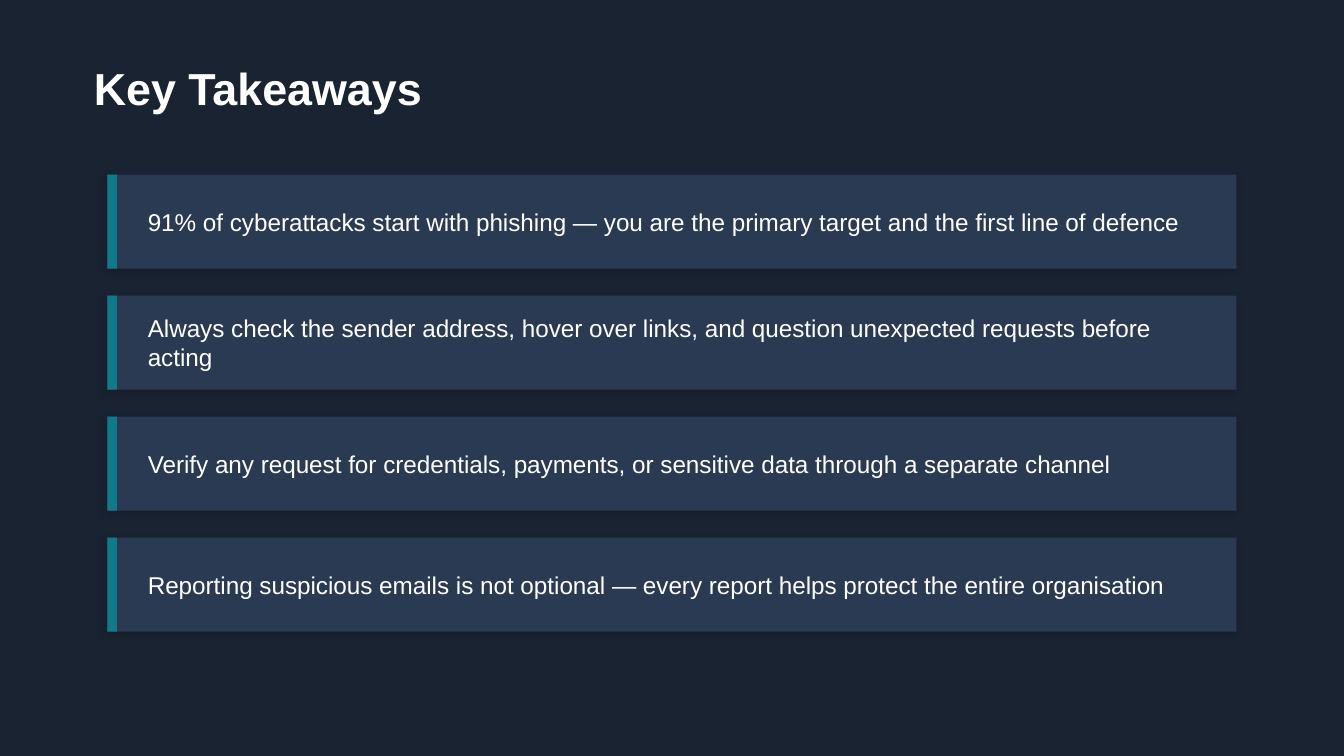
from lxml import etree
from pptx import Presentation
from pptx.dml.color import RGBColor
from pptx.enum import shapes, text
from pptx.oxml import ns
from pptx.util import Inches, Pt

NAVY = RGBColor(0x1A, 0x23, 0x32)
SLATE = RGBColor(0x2A, 0x3A, 0x52)
TEAL = RGBColor(0x0F, 0x7B, 0x8A)
WHITE = RGBColor(0xFF, 0xFF, 0xFF)

POINTS = [
    "91% of cyberattacks start with phishing — you are the primary target and the first line of defence",
    "Always check the sender address, hover over links, and question unexpected requests before acting",
    "Verify any request for credentials, payments, or sensitive data through a separate channel",
    "Reporting suspicious emails is not optional — every report helps protect the entire organisation",
]


def add_text(slide, words, box, size=13, bold=False, inset=None):
    frame = slide.shapes.add_textbox(*map(Inches, box)).text_frame
    frame.word_wrap = True
    frame.vertical_anchor = text.MSO_ANCHOR.MIDDLE
    if inset is not None:
        frame.margin_left = frame.margin_right = Inches(inset)
        frame.margin_top = frame.margin_bottom = Inches(inset)
    run = frame.paragraphs[0].add_run()
    run.text = words
    run.font.name = "Arial"
    run.font.size = Pt(size)
    run.font.bold = bold
    run.font.color.rgb = WHITE


def add_rect(slide, box, fill):
    rect = slide.shapes.add_shape(shapes.MSO_SHAPE.RECTANGLE, *map(Inches, box))
    rect.shadow.inherit = False
    rect.fill.solid()
    rect.fill.fore_color.rgb = fill
    rect.line.fill.background()
    return rect


def add_shade(shape, blur=4, dist=2, angle=135, alpha=15):
    effects = shape._element.spPr.find(ns.qn("a:effectLst"))
    shade = etree.SubElement(
        effects, ns.qn("a:outerShdw"), blurRad=str(Pt(blur)), dist=str(Pt(dist)),
        dir=str(angle * 60000), algn="bl", rotWithShape="0")
    color = etree.SubElement(shade, ns.qn("a:srgbClr"), val="000000")
    etree.SubElement(color, ns.qn("a:alpha"), val=str(alpha * 1000))


def add_card(slide, words, box):
    left, top, width, height = box
    add_shade(add_rect(slide, box, SLATE))
    add_rect(slide, (left, top, 0.07, height), TEAL)
    add_text(slide, words, (left + 0.3, top, width - 0.5, height), inset=0)


def add_list(slide, points, box, gap=0.2):
    left, top, width, height = box
    tall = (height - gap * (len(points) - 1)) / len(points)
    for i, words in enumerate(points):
        add_card(slide, words, (left, top + i * (tall + gap), width, tall))


def main():
    deck = Presentation()
    deck.slide_width = Inches(10)
    deck.slide_height = deck.slide_width * 9 // 16
    slide = deck.slides.add_slide(deck.slide_layouts[6])
    slide.background.fill.solid()
    slide.background.fill.fore_color.rgb = NAVY
    add_text(slide, "Key Takeaways", (0.6, 0.3, 8.8, 0.7), size=24, bold=True)
    add_list(slide, POINTS, (0.8, 1.3, 8.4, 3.4))
    deck.save("out.pptx")


if __name__ == "__main__":
    main()
